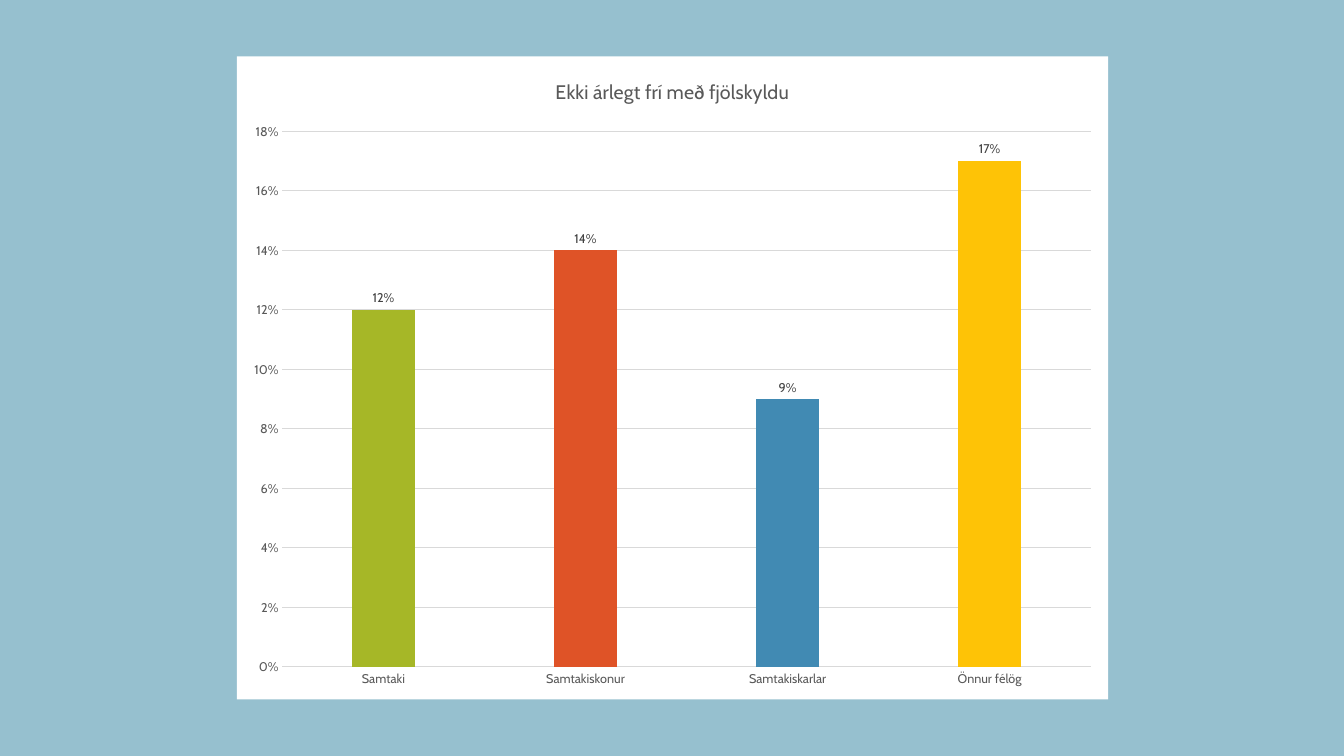
import pptx
import pptx.chart.data
import pptx.dml.color
import pptx.enum.chart
import pptx.oxml
import pptx.oxml.ns
import pptx.util

Inches, Pt = pptx.util.Inches, pptx.util.Pt
enum = pptx.enum.chart

FONT = "Cabin"
TITLE = "Ekki árlegt frí með fjölskyldu"
COLORS = {
    "back": "96C0CF", "panel": "FFFFFF", "grid": "D9D9D9",
    "text": "595959", "label": "404040", "base": "000000",
}
# Category: value and bar colour
BARS = {
    "Samtaki": (0.12, "A6B727"),
    "Samtakiskonur": (0.14, "DF5327"),
    "Samtakiskarlar": (0.09, "418AB3"),
    "Önnur félög": (0.17, "FEC306"),
}


def rgb(code):
    return pptx.dml.color.RGBColor.from_string(code)


def apply(target, values):
    for name, value in values.items():
        setattr(target, name, value)


def style(font, size, color):
    apply(font, {"name": FONT, "size": Pt(size), "bold": False})
    font.color.rgb = rgb(COLORS[color])


def paint(fill, code):
    fill.solid()
    fill.fore_color.rgb = rgb(code)


def rule(line):
    line.color.rgb = rgb(COLORS["grid"])
    line.width = Pt(0.75)


def panel(chart):
    """Give the chart area its plain fill."""
    area = pptx.oxml.parse_xml(
        f'<c:spPr {pptx.oxml.ns.nsdecls("c", "a")}><a:solidFill>'
        f'<a:srgbClr val="{COLORS["panel"]}"/></a:solidFill>'
        '<a:ln><a:noFill/></a:ln></c:spPr>')
    chart.element.find(pptx.oxml.ns.qn("c:chart")).addnext(area)


def axes(chart):
    none = enum.XL_TICK_MARK.NONE
    for axis in (chart.category_axis, chart.value_axis):
        apply(axis, {"major_tick_mark": none, "minor_tick_mark": none})
        style(axis.tick_labels.font, 9, "text")
    rule(chart.category_axis.format.line)

    scale = chart.value_axis
    apply(scale, {"minimum_scale": 0, "maximum_scale": 0.18,
                  "major_unit": 0.02, "has_major_gridlines": True})
    apply(scale.tick_labels, {"number_format": "0%",
                              "number_format_is_linked": False})
    scale.format.line.fill.background()
    rule(scale.major_gridlines.format.line)


def columns(plot):
    apply(plot, {"gap_width": 219, "overlap": -27,
                 "vary_by_categories": False})
    series = plot.series[0]
    series.invert_if_negative = False
    hues = [hue for _, hue in BARS.values()]
    paint(series.format.fill, hues[0])
    for spot, hue in enumerate(hues[1:], 1):
        paint(series.points[spot].format.fill, hue)

    # Value labels above the columns
    labels = series.data_labels
    apply(labels, {"show_value": True, "number_format": "0%",
                   "number_format_is_linked": False,
                   "position": enum.XL_LABEL_POSITION.OUTSIDE_END})
    style(labels.font, 9, "label")


def graph(slide, left, top, width, height):
    data = pptx.chart.data.CategoryChartData(number_format="0%")
    data.categories = list(BARS)
    data.add_series(TITLE, [value for value, _ in BARS.values()])
    chart = slide.shapes.add_chart(
        enum.XL_CHART_TYPE.COLUMN_CLUSTERED, Inches(left), Inches(top),
        Inches(width), Inches(height), data).chart
    style(chart.font, 10, "base")
    apply(chart, {"has_legend": False, "has_title": True})

    # Chart title
    frame = chart.chart_title.text_frame
    frame.text = TITLE
    style(frame.paragraphs[0].runs[0].font, 14, "text")
    chart.chart_title.include_in_layout = False

    panel(chart)
    axes(chart)
    columns(chart.plots[0])


def main():
    deck = pptx.Presentation()
    apply(deck, {"slide_width": Inches(13.33), "slide_height": Inches(7.5)})
    slide = deck.slides.add_slide(deck.slide_layouts[6])
    paint(slide.background.fill, COLORS["back"])
    graph(slide, 2.35, 0.56, 8.64, 6.38)
    deck.save("out.pptx")


if __name__ == "__main__":
    main()
